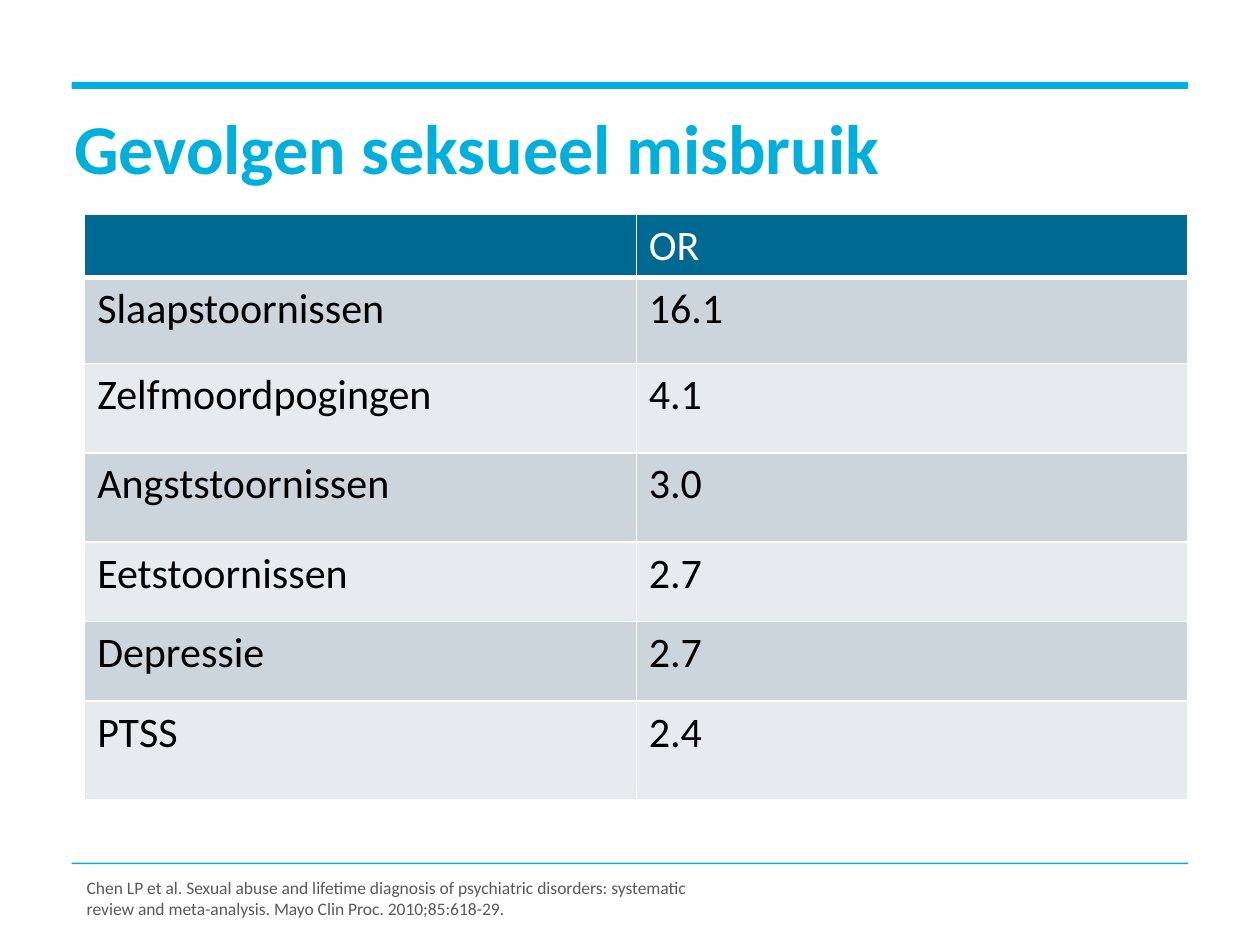
import pptx
import pptx.util
import pptx.dml.color
import pptx.enum.shapes
import pptx.enum.text
import pptx.oxml.ns
import lxml.etree

Pt = pptx.util.Pt
COLOURS = {
    "accent": "00AFDC",
    "header": "006991",
    "band_dark": "CCD4DC",
    "band_light": "E7EBEE",
    "white": "FFFFFF",
    "black": "000000",
    "grey": "595959",
}


class SlideBuilder:
    """Holds the text style and the current slide."""

    font = "Calibri"

    def __init__(self, page):
        self.page = page

    def colour(self, name):
        return pptx.dml.color.RGBColor.from_string(COLOURS[name])

    def add_span(self, para, text, size, colour, bold=False):
        span = para.add_run()
        span.text = text
        span.font.name = self.font
        span.font.size = Pt(size)
        span.font.bold = bold
        span.font.color.rgb = self.colour(colour)

    def rule(self, left, top, width, height):
        bar = self.page.shapes.add_shape(
            pptx.enum.shapes.MSO_SHAPE.RECTANGLE,
            Pt(left), Pt(top), Pt(width), Pt(height))
        bar.shadow.inherit = False
        bar.fill.solid()
        bar.fill.fore_color.rgb = self.colour("accent")
        bar.line.fill.background()

    def text(self, left, top, width, height, text, size, colour,
             bold=False, inset=(7.2, 3.6), anchor="TOP", spacing=None):
        box = self.page.shapes.add_textbox(Pt(left), Pt(top), Pt(width), Pt(height))
        frame = box.text_frame
        frame.word_wrap = True
        frame.margin_left = frame.margin_right = Pt(inset[0])
        frame.margin_top = frame.margin_bottom = Pt(inset[1])
        frame.vertical_anchor = pptx.enum.text.MSO_ANCHOR[anchor]
        para = frame.paragraphs[0]
        if spacing:
            para.line_spacing = Pt(spacing)
        self.add_span(para, text, size, colour, bold)

    def border(self, side, width):
        qn = pptx.oxml.ns.qn
        line = lxml.etree.Element(qn("a:" + side), w=str(Pt(width)))
        fill = lxml.etree.SubElement(line, qn("a:solidFill"))
        lxml.etree.SubElement(fill, qn("a:srgbClr"), val=COLOURS["white"])
        return line

    def cell(self, cell, text, fill, colour, bottom):
        cell.fill.solid()
        cell.fill.fore_color.rgb = self.colour(fill)
        # Borders come before the fill in the cell properties
        widths = {"lnL": 1, "lnR": 1, "lnT": 1, "lnB": bottom}
        properties = cell._tc.get_or_add_tcPr()
        for index, (side, width) in enumerate(widths.items()):
            properties.insert(index, self.border(side, width))
        if text:
            self.add_span(cell.text_frame.paragraphs[0], text, 24, colour)

    def table(self, left, top, column_width, heights, rows):
        columns = len(rows[0])
        grid = self.page.shapes.add_table(
            len(rows), columns, Pt(left), Pt(top),
            Pt(column_width * columns), Pt(sum(heights))).table
        for column in grid.columns:
            column.width = Pt(column_width)
        for r, (height, texts) in enumerate(zip(heights, rows)):
            grid.rows[r].height = Pt(height)
            if r == 0:
                style = ("header", "white", 3)
            else:
                style = ("band_dark" if r % 2 else "band_light", "black", 1)
            for c, text in enumerate(texts):
                self.cell(grid.cell(r, c), text, *style)


def main():
    deck = pptx.Presentation()
    deck.slide_width, deck.slide_height = Pt(720), Pt(540)
    slide = SlideBuilder(deck.slides.add_slide(deck.slide_layouts[6]))

    # Rules above the title and above the source
    slide.rule(41, 46.8, 638, 4)
    slide.rule(41, 493, 638, 0.9)

    # Title
    slide.text(42.5, 65.5, 636.5, 52, "Gevolgen seksueel misbruik", 40,
               "accent", bold=True, inset=(0, 0), spacing=42)

    # Odds ratios
    slide.table(48.4, 122.7, 315.2, [36, 49, 51, 51, 45.4, 45.4, 56.8], [
        ("", "OR"),
        ("Slaapstoornissen", "16.1"),
        ("Zelfmoordpogingen", "4.1"),
        ("Angststoornissen", "3.0"),
        ("Eetstoornissen", "2.7"),
        ("Depressie", "2.7"),
        ("PTSS", "2.4"),
    ])

    # Source
    slide.text(42.5, 497, 363, 31.5,
               "Chen LP et al. Sexual abuse and lifetime diagnosis of psychiatric "
               "disorders: systematic review and meta-analysis. "
               "Mayo Clin Proc. 2010;85:618-29.", 10, "grey", anchor="BOTTOM")

    deck.save("out.pptx")


if __name__ == "__main__":
    main()
